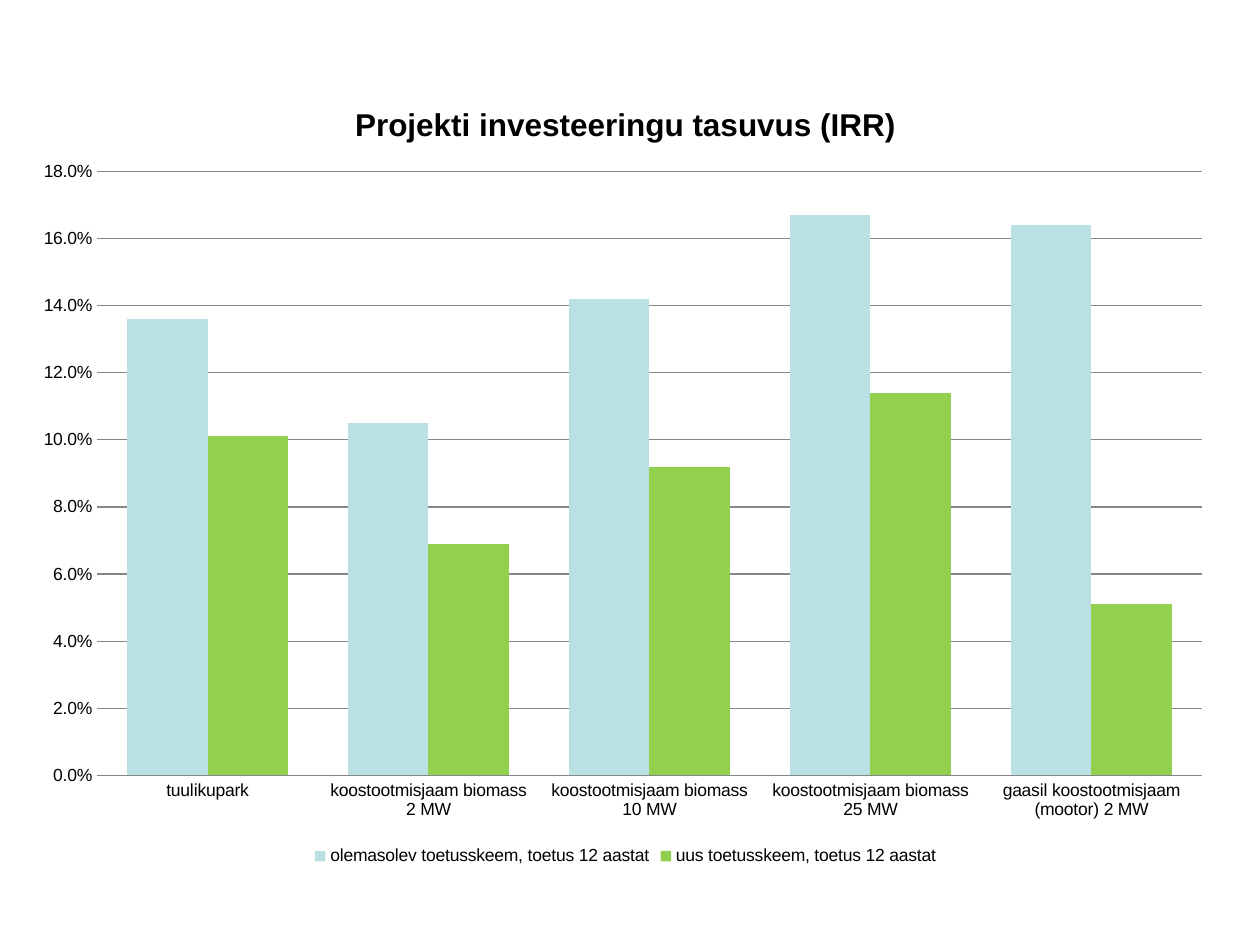
from lxml.etree import SubElement
from pptx import Presentation
from pptx.chart.data import CategoryChartData
from pptx.dml.color import RGBColor
from pptx.enum.chart import XL_CHART_TYPE, XL_LEGEND_POSITION, XL_TICK_MARK
from pptx.oxml.ns import qn
from pptx.util import Emu, Pt

EMU_PER_PX = 914400 / 126
FONT = "Arial"
BLACK = "000000"
GRID = "868686"

CATEGORIES = [
    "tuulikupark",
    "koostootmisjaam biomass 2 MW",
    "koostootmisjaam biomass 10 MW",
    "koostootmisjaam biomass 25 MW",
    "gaasil koostootmisjaam (mootor) 2 MW",
]
SERIES = [
    ("olemasolev toetusskeem, toetus 12 aastat", "BBE0E3",
     [0.136, 0.105, 0.142, 0.167, 0.164]),
    ("uus toetusskeem, toetus 12 aastat", "92D050",
     [0.101, 0.069, 0.092, 0.114, 0.051]),
]


def px(length):
    return Emu(round(length * EMU_PER_PX))


def color(value):
    return RGBColor.from_string(value)


def format_font(font, size, bold=False):
    font.name = FONT
    font.size = Pt(size)
    font.bold = bold
    font.color.rgb = color(BLACK)


def format_line(line, value):
    line.color.rgb = color(value)
    line.width = Pt(0.75)


def place_plot(chart, left, top, width, height):
    """Fix the inner plot area, in fractions of the chart box."""
    plot_area = chart.plots[0]._element.getparent()
    layout = plot_area.find(qn("c:layout"))
    if layout is None:
        layout = SubElement(plot_area, qn("c:layout"))
        plot_area.insert(0, layout)
    manual = SubElement(layout, qn("c:manualLayout"))
    settings = {"layoutTarget": "inner", "xMode": "edge", "yMode": "edge",
                "x": left, "y": top, "w": width, "h": height}
    for name, value in settings.items():
        SubElement(manual, qn(f"c:{name}")).set("val", str(value))


def format_axes(chart):
    for axis in (chart.category_axis, chart.value_axis):
        axis.major_tick_mark = XL_TICK_MARK.NONE
        axis.minor_tick_mark = XL_TICK_MARK.NONE
        format_font(axis.tick_labels.font, 10)
    format_line(chart.category_axis.format.line, GRID)

    values = chart.value_axis
    values.minimum_scale, values.maximum_scale = 0, 0.18
    values.major_unit = 0.02
    values.tick_labels.number_format = "0.0%"
    values.tick_labels.number_format_is_linked = False
    values.format.line.fill.background()
    values.has_major_gridlines = True
    format_line(values.major_gridlines.format.line, GRID)


def add_return_chart(page, left, top, width, height):
    chart_data = CategoryChartData(number_format="0.0%")
    chart_data.categories = CATEGORIES
    for name, _, values in SERIES:
        chart_data.add_series(name, values)
    chart = page.shapes.add_chart(
        XL_CHART_TYPE.COLUMN_CLUSTERED,
        px(left), px(top), px(width), px(height), chart_data).chart
    format_font(chart.font, 10)

    chart.has_title = True
    title = chart.chart_title.text_frame
    title.text = "Projekti investeeringu tasuvus (IRR)"
    format_font(title.paragraphs[0].runs[0].font, 18, bold=True)
    chart.chart_title.include_in_layout = False

    chart.has_legend = True
    chart.legend.position = XL_LEGEND_POSITION.BOTTOM
    chart.legend.include_in_layout = False
    format_font(chart.legend.font, 10)

    plot = chart.plots[0]
    plot.gap_width, plot.overlap = 75, 0
    plot.vary_by_categories = False
    for series, (_, fill, _) in zip(plot.series, SERIES):
        series.format.fill.solid()
        series.format.fill.fore_color.rgb = color(fill)
        series.invert_if_negative = False
    format_axes(chart)
    place_plot(chart, 0.06, 0.12, 0.92, 0.76)


def main():
    deck = Presentation()
    deck.slide_width, deck.slide_height = px(1260), px(945)
    page = deck.slides.add_slide(deck.slide_layouts[6])
    add_return_chart(page, 25, 76, 1201, 795)
    deck.save("out.pptx")


if __name__ == "__main__":
    main()
